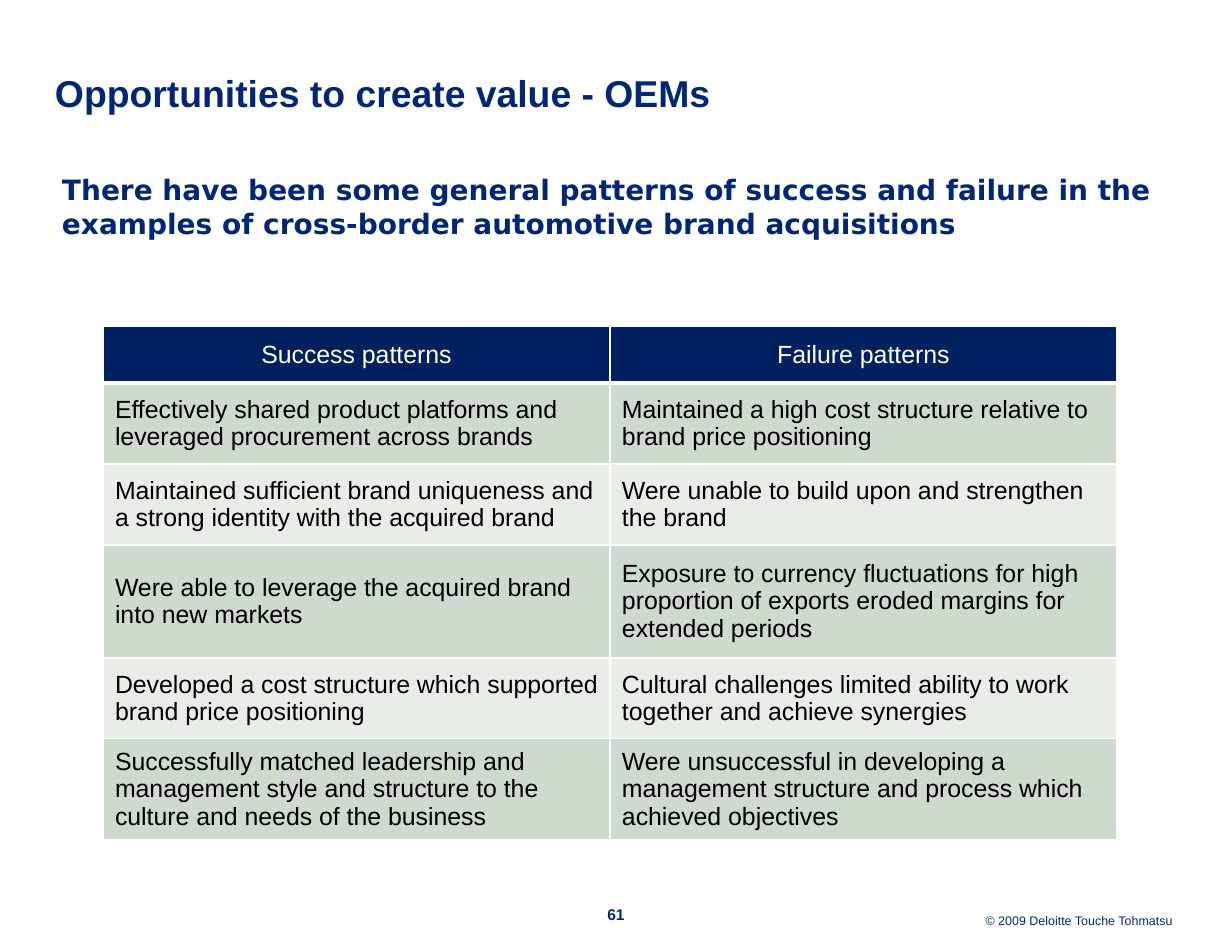
from lxml import etree
from pptx import Presentation
from pptx import util as u
from pptx.dml.color import RGBColor
from pptx.enum import text
from pptx.oxml.ns import qn

# Content
TITLE = "Opportunities to create value - OEMs"
MESSAGE = ("There have been some general patterns of success and failure in the "
           "examples of cross-border automotive brand acquisitions")
PAGE = "61"
COPYRIGHT = "© 2009 Deloitte Touche Tohmatsu"
PATTERNS = [
    ("Success patterns", "Failure patterns"),
    ("Effectively shared product platforms and leveraged procurement across brands",
     "Maintained a high cost structure relative to brand price positioning"),
    ("Maintained sufficient brand uniqueness and a strong identity with the acquired brand",
     "Were unable to build upon and strengthen the brand"),
    ("Were able to leverage the acquired brand into new markets",
     "Exposure to currency fluctuations for high proportion of exports eroded margins "
     "for extended periods"),
    ("Developed a cost structure which supported brand price positioning",
     "Cultural challenges limited ability to work together and achieve synergies"),
    ("Successfully matched leadership and management style and structure to the culture "
     "and needs of the business",
     "Were unsuccessful in developing a management structure and process which achieved "
     "objectives"),
]

# Geometry in px
PX = 914400 // 112
SLIDE = (1232, 952)
TITLE_BOX = (55, 48, 1135, 87)
MESSAGE_BOX = (50, 161, 1131, 93)
PAGE_BOX = (597, 905, 38, 20)
COPYRIGHT_BOX = (862, 909, 311, 20)
TABLE_AT = (103, 326)
COL_W = 507
ROW_H = [57, 81, 81, 113, 81, 101]
CELL_MARGINS = (12, 7, 12, 7)

# Theme
LEFT, CENTER, RIGHT = text.PP_ALIGN.LEFT, text.PP_ALIGN.CENTER, text.PP_ALIGN.RIGHT
MIDDLE, TOP = text.MSO_ANCHOR.MIDDLE, text.MSO_ANCHOR.TOP
THEME = {
    "header_fill": "002060", "bands": ("CEDACD", "E8EDE8"), "rule": "FFFFFF",
    "title": dict(name="Arial", size=24, bold=True, color="002776"),
    "message": dict(name="DejaVu Sans", size=18, bold=True, color="002776"),
    "page": dict(name="Arial", size=10, bold=True, color="002776"),
    "copyright": dict(name="Arial", size=8, bold=False, color="002776"),
    "header": dict(name="Arial", size=16, bold=False, color="FFFFFF"),
    "cell": dict(name="Arial", size=16, bold=False, color="000000"),
}


def write(tf, words, style, align=LEFT, spacing=None):
    p = tf.paragraphs[0]
    p.alignment = align
    if spacing:
        p.line_spacing = spacing
    r = p.add_run()
    r.text = words
    values = dict(THEME[style])
    r.font.color.rgb = RGBColor.from_string(values.pop("color"))
    values["size"] = u.Pt(values["size"])
    for key, value in values.items():
        setattr(r.font, key, value)


def set_margins(target, margins):
    for side, px in zip(("left", "top", "right", "bottom"), margins):
        setattr(target, "margin_" + side, px * PX)


def place(sp, box, inset=0, anchor=TOP):
    for key, px in zip(("left", "top", "width", "height"), box):
        setattr(sp, key, px * PX)
    tf = sp.text_frame
    set_margins(tf, [inset] * 4)
    tf.word_wrap = True
    tf.auto_size = text.MSO_AUTO_SIZE.NONE
    tf.vertical_anchor = anchor
    return tf


def add_borders(cell, widths):
    tc_pr = cell._tc.get_or_add_tcPr()
    for i, (side, pt) in enumerate(zip("LRTB", widths)):
        ln = etree.Element(qn("a:ln" + side), w=str(u.Pt(pt)))
        fill = etree.SubElement(ln, qn("a:solidFill"))
        etree.SubElement(fill, qn("a:srgbClr"), val=THEME["rule"])
        tc_pr.insert(i, ln)


prs = Presentation()
prs.slide_width, prs.slide_height = (px * PX for px in SLIDE)
s = prs.slides.add_slide(prs.slide_layouts[5])

# Title, message and footer
write(place(s.shapes.title, TITLE_BOX, anchor=MIDDLE), TITLE, "title", spacing=1.05)
for words, box, style, inset, align, spacing in (
    (MESSAGE, MESSAGE_BOX, "message", 12, LEFT, None),
    (PAGE, PAGE_BOX, "page", 0, CENTER, u.Pt(12)),
    (COPYRIGHT, COPYRIGHT_BOX, "copyright", 0, RIGHT, u.Pt(12)),
):
    sp = s.shapes.add_textbox(0, 0, 0, 0)
    write(place(sp, box, inset), words, style, align, spacing)

# Table of patterns
size = (COL_W * len(PATTERNS[0]), sum(ROW_H))
table = s.shapes.add_table(len(PATTERNS), len(PATTERNS[0]),
                           *(px * PX for px in TABLE_AT + size)).table
for col in table.columns:
    col.width = COL_W * PX
for i, (row, height) in enumerate(zip(PATTERNS, ROW_H)):
    table.rows[i].height = height * PX
    header = i == 0
    for j, words in enumerate(row):
        cell = table.cell(i, j)
        set_margins(cell, CELL_MARGINS)
        cell.vertical_anchor = MIDDLE
        cell.fill.solid()
        cell.fill.fore_color.rgb = RGBColor.from_string(
            THEME["header_fill"] if header else THEME["bands"][(i - 1) % 2])
        add_borders(cell, (1, 1, 1, 3 if header else 1))
        write(cell.text_frame, words, "header" if header else "cell",
              CENTER if header else LEFT)

prs.save("out.pptx")
